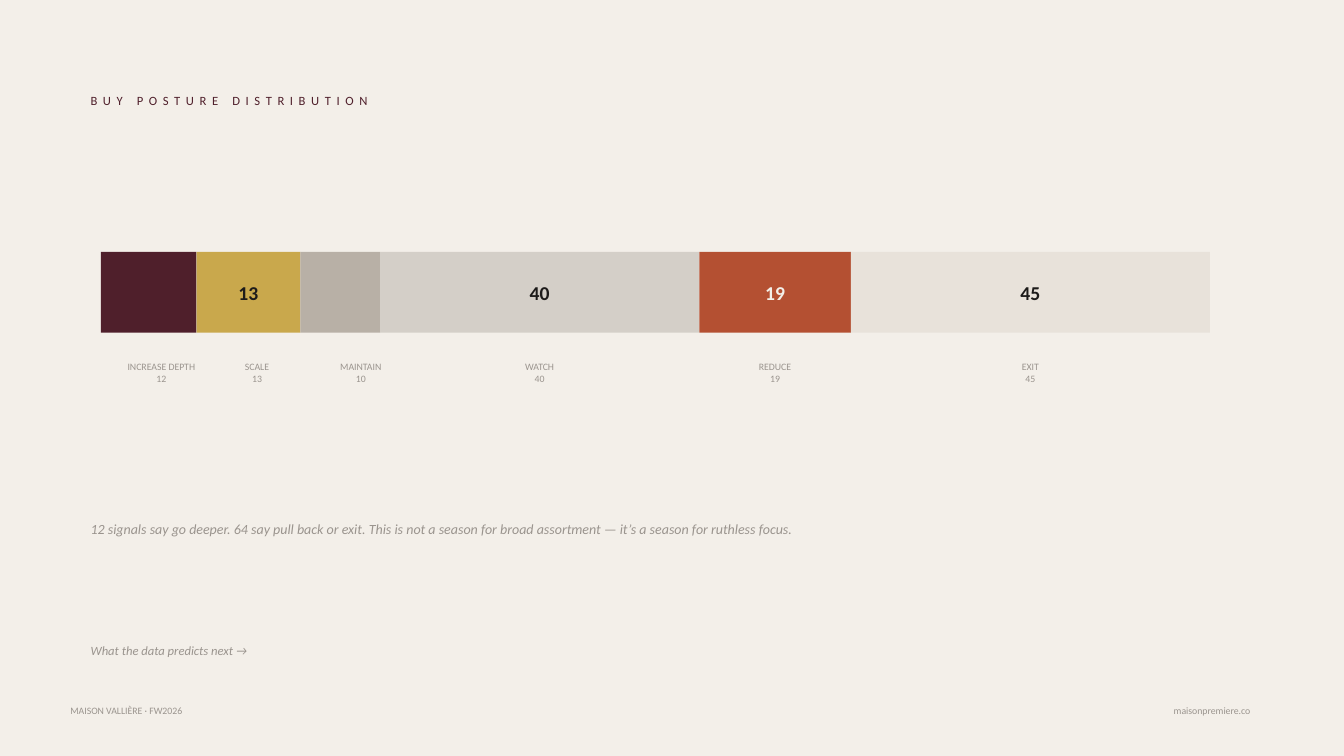
from pptx import Presentation
from pptx.dml.color import RGBColor as Color
from pptx.enum.shapes import MSO_SHAPE as Shape
from pptx.enum.text import MSO_ANCHOR as Anchor, PP_ALIGN as Align
from pptx.util import Inches, Pt

COLORS = {
    "paper": "F3EFE9", "ink": "1D1B1A", "muted": "9A948E", "wine": "4F1F2B",
    "gold": "C9A84C", "taupe": "B8B0A6", "stone": "D4CFC8", "rust": "B45032",
    "sand": "E8E2DA",
}

# Posture, number of signals, bar fill, value colour
POSTURES = [
    ("INCREASE DEPTH", 12, "wine", "paper"),
    ("SCALE", 13, "gold", "ink"),
    ("MAINTAIN", 10, "taupe", "ink"),
    ("WATCH", 40, "stone", "ink"),
    ("REDUCE", 19, "rust", "paper"),
    ("EXIT", 45, "sand", "ink"),
]
BAR_LEFT, BAR_TOP, BAR_WIDTH, BAR_HEIGHT = 1, 2.5, 11, 0.8
MIN_VALUE_WIDTH, MIN_LABEL_WIDTH = 1, 1.2


class SlideBuilder:
    font_name = "Calibri"

    def __init__(self, deck):
        self.page = deck.slides.add_slide(deck.slide_layouts[6])
        fill = self.page.background.fill
        fill.solid()
        fill.fore_color.rgb = self.color("paper")

    def color(self, name):
        return Color.from_string(COLORS[name])

    def fill_text(self, box, lines, size, color="muted", align=Align.LEFT,
                  spacing=None, **formats):
        frame = box.text_frame
        frame.word_wrap = True
        frame.vertical_anchor = Anchor.MIDDLE
        formats = {"name": self.font_name, "size": Pt(size), **formats}
        for index, line in enumerate(lines):
            para = frame.add_paragraph() if index else frame.paragraphs[0]
            para.alignment = align
            span = para.add_run()
            span.text = line
            for key, value in formats.items():
                setattr(span.font, key, value)
            span.font.color.rgb = self.color(color)
            if spacing:
                span._r.get_or_add_rPr().set("spc", str(spacing * 100))

    def text(self, left, top, width, height, lines, size, **style):
        box = self.page.shapes.add_textbox(
            Inches(left), Inches(top), Inches(width), Inches(height))
        self.fill_text(box, lines, size, **style)

    def bar(self, left, top, width, height, fill):
        box = self.page.shapes.add_shape(
            Shape.RECTANGLE, Inches(left), Inches(top), Inches(width), Inches(height))
        box.shadow.inherit = False
        box.fill.solid()
        box.fill.fore_color.rgb = self.color(fill)
        box.line.fill.background()
        return box


def main():
    deck = Presentation()
    deck.slide_width, deck.slide_height = Inches(13.33), Inches(7.5)
    slide = SlideBuilder(deck)

    # Heading
    slide.text(0.8, 0.8, 10, 0.4, ["BUY POSTURE DISTRIBUTION"], 9,
               color="wine", spacing=4)

    # Segments share the bar in proportion to their signals
    total = sum(count for _, count, _, _ in POSTURES)
    left = BAR_LEFT
    for label, count, fill, value_color in POSTURES:
        width = BAR_WIDTH * count / total
        segment = slide.bar(left, BAR_TOP, width, BAR_HEIGHT, fill)
        if width > MIN_VALUE_WIDTH:
            slide.fill_text(segment, [str(count)], 14, color=value_color,
                            align=Align.CENTER, bold=True)
        slide.text(left, 3.45, max(width, MIN_LABEL_WIDTH), 0.5,
                   [label, str(count)], 7, align=Align.CENTER)
        left += width

    # Takeaway and lead-in to the next page
    slide.text(0.8, 5, 10, 0.5,
               ["12 signals say go deeper. 64 say pull back or exit. This is not a "
                "season for broad assortment — it’s a season for ruthless focus."],
               10, italic=True)
    slide.text(0.8, 6.3, 10, 0.3, ["What the data predicts next →"], 9, italic=True)

    # Footer
    slide.text(0.6, 6.9, 5, 0.3, ["MAISON VALLIÈRE · FW2026"], 7)
    slide.text(7.5, 6.9, 5, 0.3, ["maisonpremiere.co"], 7, align=Align.RIGHT)

    deck.save("out.pptx")


if __name__ == "__main__":
    main()
